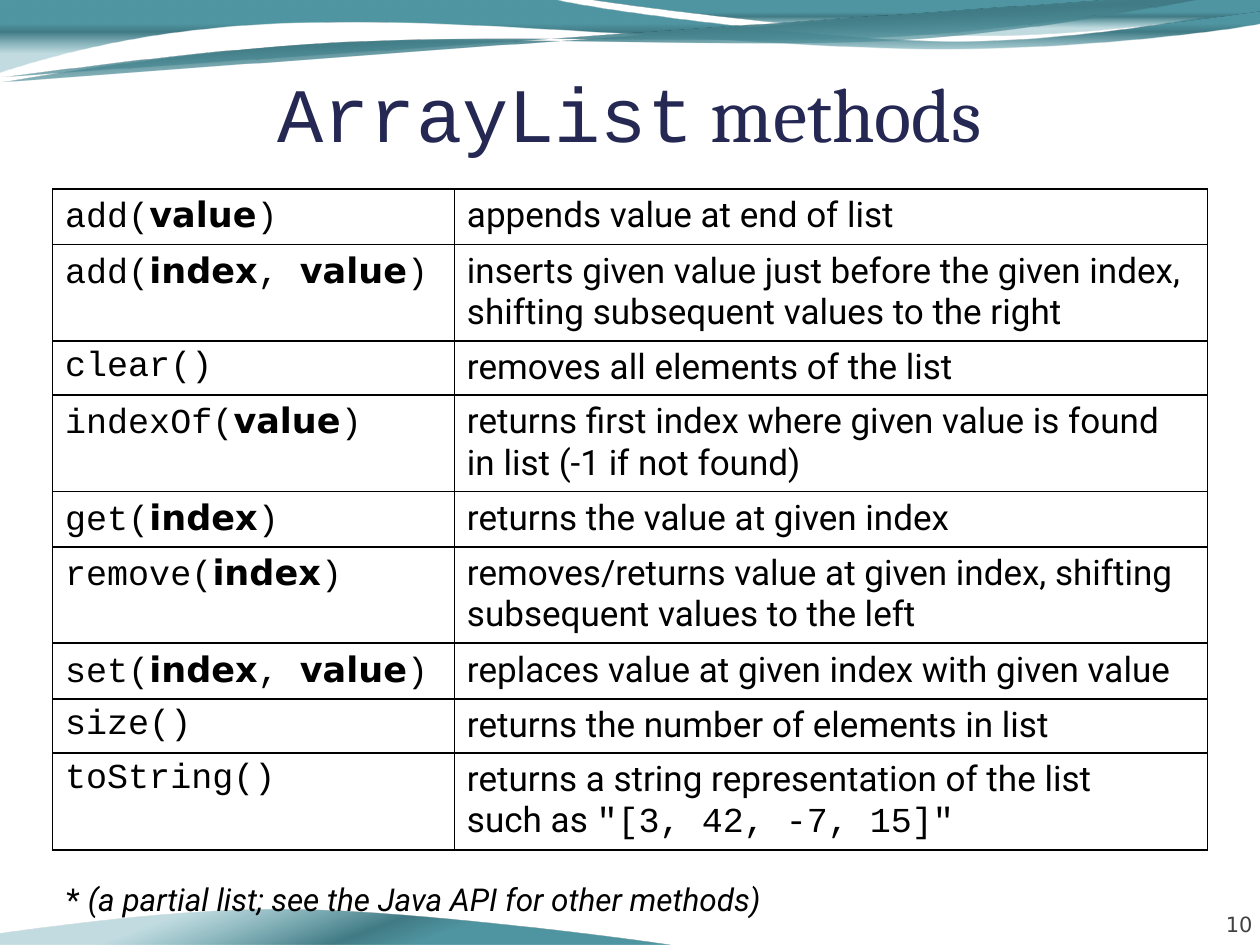
from dataclasses import dataclass
from math import cos, radians, sin

from pptx import Presentation
from pptx.dml.color import RGBColor
from pptx.enum.text import MSO_ANCHOR, MSO_AUTO_SIZE, PP_ALIGN
from pptx.oxml import parse_xml
from pptx.oxml.ns import nsdecls, qn
from pptx.util import Cm, Pt

CODE, BODY, PARAMETER, HEADING = "Courier New", "Roboto", "DejaVu Sans", "Cambria"
BLACK, NAVY, GREY = "000000", "242852", "424242"
WAVE_STOPS = ((33, "5096A2", 100), (44, "417B85", 100), (74, "5AA2AE", 37))
BORDER_SIDES = ("lnL", "lnR", "lnT", "lnB")


@dataclass
class Piece:
    text: str
    font: str = BODY
    bold: bool = False
    italic: bool = False


@dataclass
class Method:
    name: str
    parameters: list[str]
    description: list[list[Piece]]


@dataclass
class Wave:
    """A start point in cm, then segments of one point (line) or three (curve)."""
    start: tuple
    segments: list[tuple]
    rotation: float = 0
    angle: float = 90
    closed: bool = True


WAVES = [
    Wave((0, 0), [
        ((11.18, 0),),
        ((12.09, 0.23), (16.87, 0.84), (19.25, 0.84)),
        ((21.67, 0.84), (24.33, 0.36), (25.4, 0.13)),
        ((25.43, 0.48),),
        ((24.97, 0.58), (22.1, 0.99), (18.95, 0.99)),
        ((15.8, 0.99), (9.7, 0.38), (6.53, 0.46)),
        ((3.28, 0.48), (1.17, 1.09), (-0.03, 1.47)),
        ((0, 0),)]),
    Wave((11.86, 0), [
        ((12.65, 0.13), (17.12, 0.69), (19.38, 0.71)),
        ((21.64, 0.76), (24.41, 0.36), (25.4, 0.23)),
        ((25.4, 0),),
        ((11.86, 0),)]),
    Wave((0.03, 1.65), [
        ((1.27, 1.45), (4.06, 0.99), (7.09, 0.86)),
        ((10.11, 0.71), (15.06, 0.99), (18.14, 0.81)),
        ((21.18, 0.64), (23.9, 0), (25.4, -0.2))], rotation=357.3, closed=False),
    Wave((0.03, 1.55), [
        ((1.24, 1.42), (4.22, 0.97), (7.24, 0.84)),
        ((10.26, 0.69), (15.16, 0.91), (18.19, 0.74)),
        ((21.23, 0.56), (23.9, -0.03), (25.4, -0.2))], rotation=357.3, closed=False),
    Wave((13.52, 19.05), [
        ((12.73, 18.92), (8.26, 18.36), (5.99, 18.34)),
        ((3.73, 18.29), (0.97, 18.69), (-0.03, 18.82)),
        ((-0.03, 19.05),),
        ((13.52, 19.05),)], rotation=180, angle=70),
]

METHODS = [
    Method("add", ["value"], [[Piece("appends value at end of list")]]),
    Method("add", ["index", "value"], [[Piece(
        "inserts given value just before the given index, "
        "shifting subsequent values to the right")]]),
    Method("clear", [], [[Piece("removes all elements of the list")]]),
    Method("indexOf", ["value"], [[Piece(
        "returns first index where given value is found in list (-1 if not found)")]]),
    Method("get", ["index"], [[Piece("returns the value at given index")]]),
    Method("remove", ["index"], [[Piece(
        "removes/returns value at given index, shifting subsequent values to the left")]]),
    Method("set", ["index", "value"], [[Piece(
        "replaces value at given index with given value")]]),
    Method("size", [], [[Piece("returns the number of elements in list")]]),
    Method("toString", [], [
        [Piece("returns a string representation of the list")],
        [Piece("such as "), Piece('"[3, 42, -7, 15]"', CODE)]]),
]
TWO_LINE_ROWS = {1, 3, 5, 8}


def color(value: str) -> RGBColor:
    return RGBColor.from_string(value)


def write(text_frame, lines: list[list[Piece]], size: float, text_color: str,
          alignment=PP_ALIGN.LEFT) -> None:
    for number, pieces in enumerate(lines):
        paragraph = text_frame.add_paragraph() if number else text_frame.paragraphs[0]
        paragraph.alignment = alignment
        paragraph.font.size = Pt(size)
        paragraph.font.color.rgb = color(text_color)
        for piece in pieces:
            run = paragraph.add_run()
            run.text = piece.text
            run.font.name = piece.font
            run.font.size = Pt(size)
            run.font.color.rgb = color(text_color)
            run.font.bold = piece.bold
            run.font.italic = piece.italic


def turn_back(points: list[tuple], degrees: float) -> list[tuple]:
    """Undo a rotation, so that the shape itself can carry it."""
    center_x, center_y = (
        (min(values) + max(values)) / 2 for values in zip(*points))
    cosine, sine = cos(radians(-degrees)), sin(radians(-degrees))
    return [(center_x + (x - center_x) * cosine - (y - center_y) * sine,
             center_y + (x - center_x) * sine + (y - center_y) * cosine)
            for x, y in points]


def draw_wave(slide, wave: Wave) -> None:
    points = [wave.start, *(point for segment in wave.segments for point in segment)]
    points = [(Cm(x), Cm(y)) for x, y in turn_back(points, wave.rotation)]
    builder = slide.shapes.build_freeform(*points[0])
    builder.add_line_segments(points[1:], close=wave.closed)
    shape = builder.convert_to_shape()
    shape.rotation = wave.rotation
    shape.shadow.inherit = False
    shape.line.fill.background()
    geometry = shape.element.spPr.custGeom
    # Join the three points of each curve into one cubic segment
    lines = iter(list(geometry.iter(qn("a:lnTo"))))
    for segment in wave.segments:
        steps = [next(lines) for _ in segment]
        if len(steps) == 3:
            curve = parse_xml(f'<a:cubicBezTo {nsdecls("a")}/>')
            steps[0].addprevious(curve)
            for step in steps:
                curve.append(step[0])
                step.getparent().remove(step)
    # Gradient with a translucent end
    stops = "".join(
        f'<a:gs pos="{position * 1000}"><a:srgbClr val="{value}">'
        f'<a:alpha val="{opacity * 1000}"/></a:srgbClr></a:gs>'
        for position, value, opacity in WAVE_STOPS)
    geometry.addnext(parse_xml(
        f'<a:gradFill {nsdecls("a")} rotWithShape="1"><a:gsLst>{stops}</a:gsLst>'
        f'<a:lin ang="{wave.angle * 60000}" scaled="0"/></a:gradFill>'))


def draw_border(cell) -> None:
    properties = cell._tc.get_or_add_tcPr()
    for side in BORDER_SIDES:
        properties.append(parse_xml(
            f'<a:{side} {nsdecls("a")} w="12700"><a:solidFill>'
            f'<a:srgbClr val="{BLACK}"/></a:solidFill></a:{side}>'))


def signature(method: Method) -> list[Piece]:
    if not method.parameters:
        return [Piece(method.name + "()", CODE)]
    pieces = [Piece(method.name + "(", CODE)]
    for number, parameter in enumerate(method.parameters):
        if number:
            pieces.append(Piece(", ", CODE))
        pieces.append(Piece(parameter, PARAMETER, bold=True))
    return pieces + [Piece(")", CODE)]


def draw_methods(slide) -> None:
    table = slide.shapes.add_table(
        len(METHODS), 2, Cm(1.06), Cm(3.81), Cm(23.28), Cm(13.25)).table
    table.first_row = table.horz_banding = False
    for column, width in zip(table.columns, (8.1, 15.18)):
        column.width = Cm(width)
    for number, method in enumerate(METHODS):
        table.rows[number].height = Cm(1.94 if number in TWO_LINE_ROWS else 1.09)
        contents = ([signature(method)], method.description)
        for cell, lines in zip(table.rows[number].cells, contents):
            draw_border(cell)
            cell.fill.background()
            write(cell.text_frame, lines, 20, BLACK)


def main() -> None:
    presentation = Presentation()
    presentation.slide_width, presentation.slide_height = Cm(25.4), Cm(19.05)
    slide = presentation.slides.add_slide(presentation.slide_layouts[5])

    # Page number and background waves
    number_frame = slide.shapes.add_textbox(
        Cm(23.14), Cm(17.86), Cm(2.11), Cm(1.02)).text_frame
    number_frame.margin_left = number_frame.margin_right = 0
    number_frame.margin_top = number_frame.margin_bottom = 0
    number_frame.word_wrap = True
    number_frame.vertical_anchor = MSO_ANCHOR.BOTTOM
    write(number_frame, [[Piece("10", PARAMETER)]], 12, GREY, PP_ALIGN.RIGHT)
    for wave in WAVES:
        draw_wave(slide, wave)

    # Title, in front of the waves
    title = slide.shapes.title
    slide.shapes.element.append(title.element)
    title.left, title.top, title.width, title.height = Cm(1.27), Cm(1.22), Cm(22.86), Cm(1.96)
    title_frame = title.text_frame
    title_frame.margin_left = title_frame.margin_right = title_frame.margin_bottom = 0
    title_frame.margin_top = Cm(0.13)
    title_frame.vertical_anchor = MSO_ANCHOR.BOTTOM
    title_frame.auto_size = MSO_AUTO_SIZE.NONE
    write(title_frame, [[Piece("ArrayList", CODE), Piece(" methods", HEADING)]],
          44, NAVY, PP_ALIGN.CENTER)

    draw_methods(slide)

    # Footnote
    note_frame = slide.shapes.add_textbox(Cm(1.09), Cm(17.62), Cm(15.29), Cm(1.02)).text_frame
    note_frame.word_wrap = False
    note_frame.auto_size = MSO_AUTO_SIZE.SHAPE_TO_FIT_TEXT
    write(note_frame, [[Piece("* "), Piece(
        "(a partial list; see the Java API for other methods)", italic=True)]], 18, BLACK)

    presentation.save("out.pptx")


if __name__ == "__main__":
    main()
